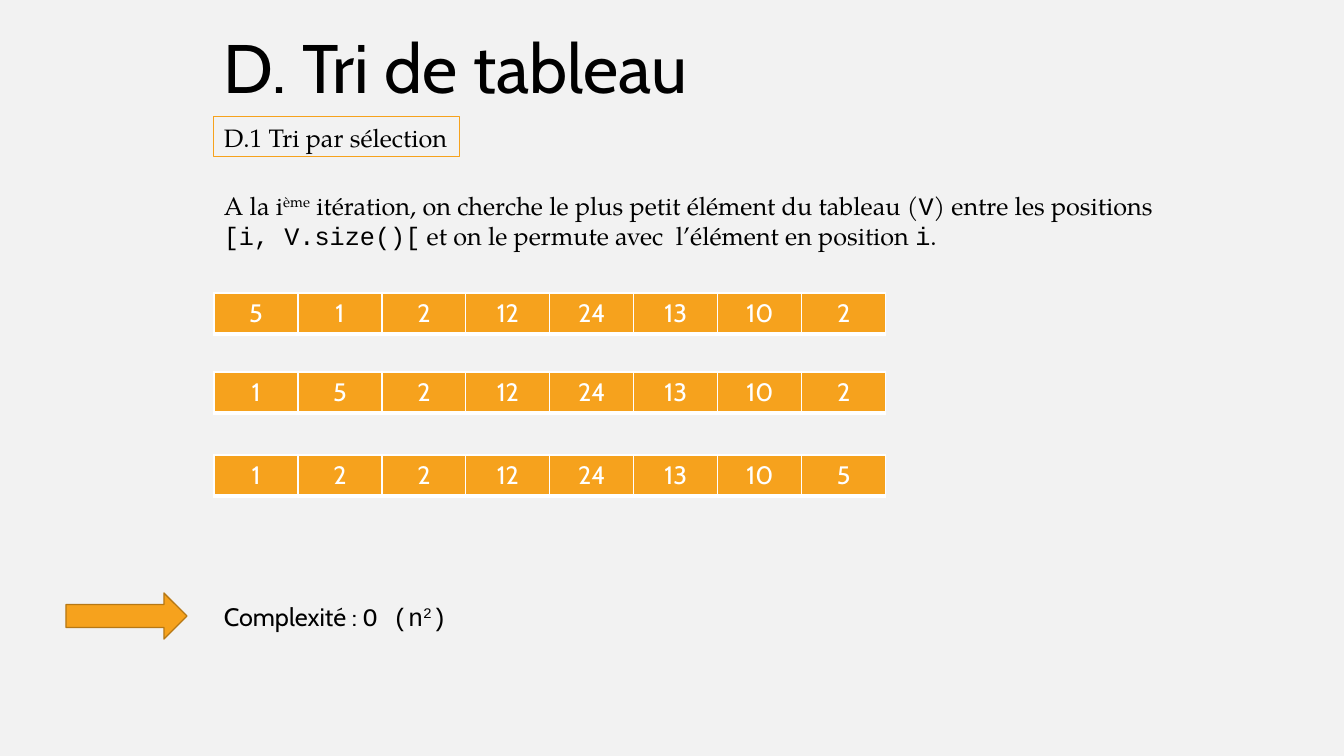
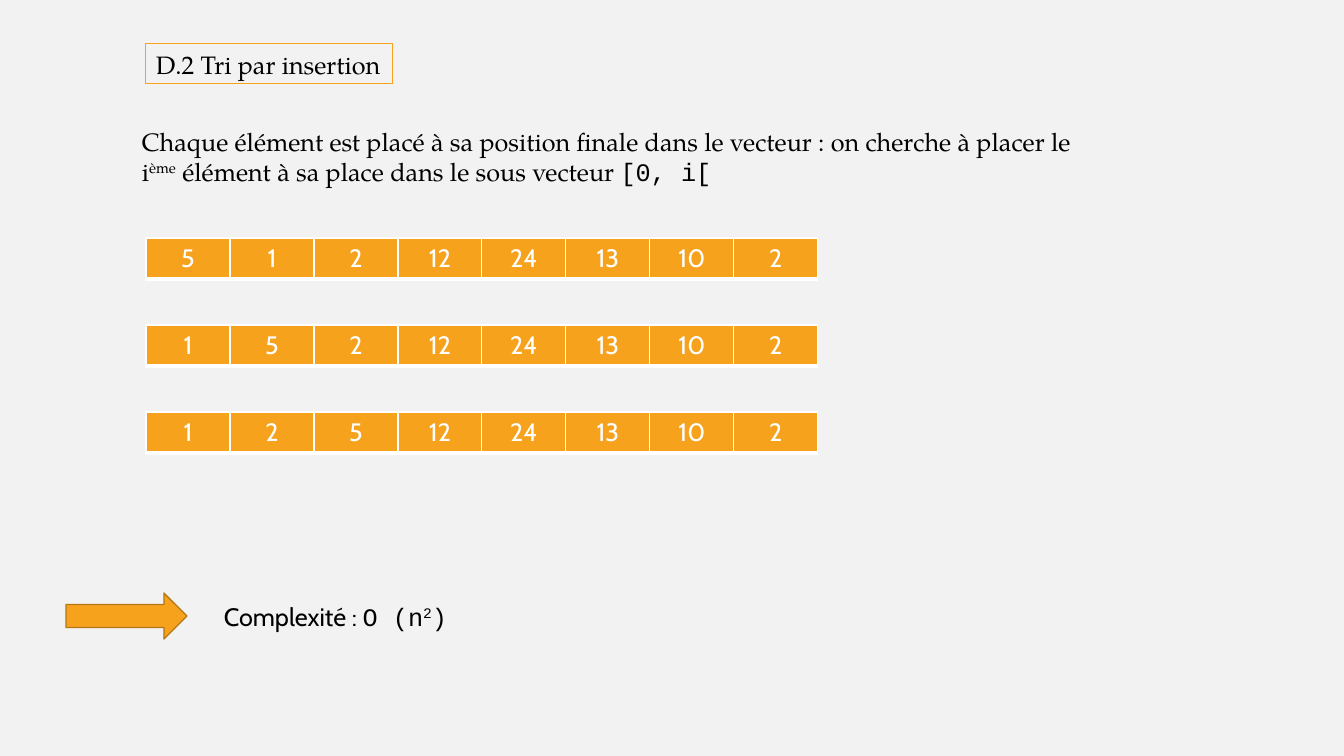
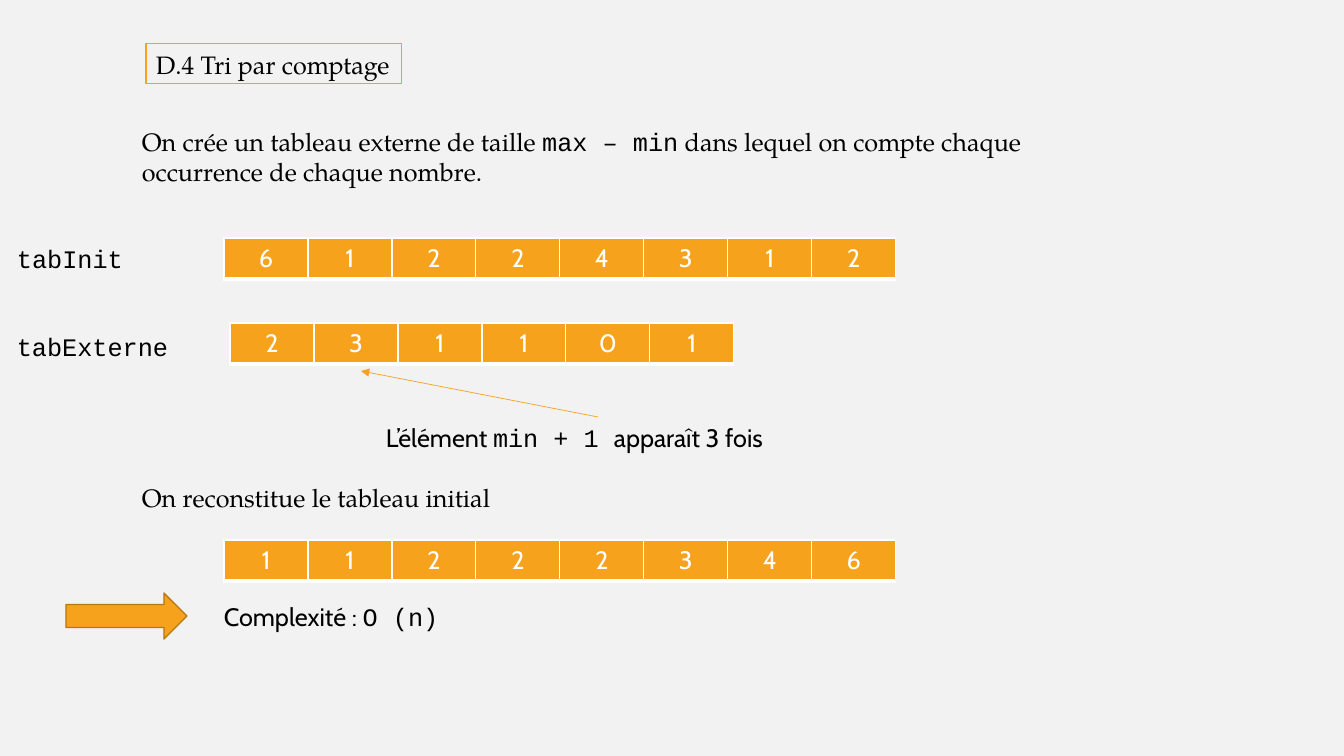
from dataclasses import dataclass
from typing import NamedTuple

from lxml.etree import SubElement
from pptx import Presentation
from pptx.dml.color import RGBColor
from pptx.enum.shapes import MSO_CONNECTOR, MSO_SHAPE
from pptx.enum.text import MSO_ANCHOR, MSO_AUTO_SIZE, PP_ALIGN
from pptx.oxml import parse_xml
from pptx.oxml.ns import nsdecls, qn
from pptx.util import Emu, Pt

SLIDE_WIDTH, SLIDE_HEIGHT = 1344, 756
EMU_PER_PX = 12192000 / SLIDE_WIDTH


@dataclass(frozen=True)
class Theme:
    background: str = "F2F2F2"
    accent: str = "F6A21D"
    accent_dark: str = "B67815"
    ink: str = "000000"
    white: str = "FFFFFF"
    sans: str = "Cabin"
    serif: str = "TeX Gyre Pagella"
    mono: str = "Courier New"
    title_size: int = 49
    body_size: int = 18


THEME = Theme()

# Array cells: size in px, border widths in points
CELL_WIDTH, CELL_HEIGHT = 84, 41
CELL_BORDERS = {"lnL": 1, "lnR": 1, "lnT": 1, "lnB": 3}
LINE_HEIGHT = 40


class Span(NamedTuple):
    text: str
    font: str
    raised: bool = False


def sans(text):
    return Span(text, THEME.sans)


def serif(text):
    return Span(text, THEME.serif)


def code(text):
    return Span(text, THEME.mono)


def raised(span):
    return span._replace(raised=True)


def px(length):
    return Emu(round(length * EMU_PER_PX))


def rgb(colour):
    return RGBColor.from_string(colour)


# Text
def write(paragraph, spans, size=THEME.body_size, colour=THEME.ink):
    for span in spans:
        run = paragraph.add_run()
        run.text = span.text
        run.font.name = span.font
        run.font.size = Pt(size)
        run.font.color.rgb = rgb(colour)
        if span.raised:
            run._r.get_or_add_rPr().set("baseline", "30000")


def add_text(slide, left, top, width, lines, height=LINE_HEIGHT):
    frame = slide.shapes.add_textbox(px(left), px(top), px(width), px(height)).text_frame
    frame.word_wrap = True
    frame.auto_size = MSO_AUTO_SIZE.SHAPE_TO_FIT_TEXT
    paragraph = frame.paragraphs[0]
    for index, spans in enumerate(lines):
        if index:
            paragraph.add_line_break()
        write(paragraph, spans)


def add_title(slide, text):
    frame = slide.shapes.add_textbox(px(214), px(16), px(832), px(101)).text_frame
    frame.word_wrap = True
    frame.vertical_anchor = MSO_ANCHOR.MIDDLE
    write(frame.paragraphs[0], [sans(text)], THEME.title_size)


# Shapes
def add_preset(slide, preset, left, top, width, height, line, weight):
    shape = slide.shapes.add_shape(preset, px(left), px(top), px(width), px(height))
    shape.shadow.inherit = False
    shape.line.color.rgb = rgb(line)
    shape.line.width = Pt(weight)
    return shape


def add_heading(slide, left, top, width, text):
    heading = add_preset(slide, MSO_SHAPE.RECTANGLE, left, top, width, LINE_HEIGHT,
                         THEME.accent, 0.75)
    heading.fill.background()
    frame = heading.text_frame
    frame.word_wrap = False
    frame.auto_size = MSO_AUTO_SIZE.SHAPE_TO_FIT_TEXT
    frame.vertical_anchor = MSO_ANCHOR.MIDDLE
    frame.paragraphs[0].alignment = PP_ALIGN.LEFT
    write(frame.paragraphs[0], [serif(text)])


def add_complexity(slide, cost):
    arrow = add_preset(slide, MSO_SHAPE.RIGHT_ARROW, 66, 593, 121, 46, THEME.accent_dark, 1)
    arrow.fill.solid()
    arrow.fill.fore_color.rgb = rgb(THEME.accent)
    add_text(slide, 214, 596, 1011, [[sans("Complexité : "), *cost]])


def add_pointer(slide, start, end):
    pointer = slide.shapes.add_connector(MSO_CONNECTOR.STRAIGHT, *map(px, start + end))
    pointer.line.color.rgb = rgb(THEME.accent)
    pointer.line.width = Pt(0.5)
    properties = pointer._element.spPr
    SubElement(properties.find(qn("a:ln")), qn("a:tailEnd"), type="triangle")
    SubElement(properties, qn("a:effectLst"))


# Arrays
def add_borders(cell):
    properties = cell._tc.get_or_add_tcPr()
    for index, (side, weight) in enumerate(CELL_BORDERS.items()):
        properties.insert(index, parse_xml(
            f'<a:{side} {nsdecls("a")} w="{Pt(weight)}"><a:solidFill>'
            f'<a:srgbClr val="{THEME.white}"/></a:solidFill></a:{side}>'))


def add_array(slide, left, top, values):
    table = slide.shapes.add_table(1, len(values), px(left), px(top),
                                   px(CELL_WIDTH * len(values)), px(CELL_HEIGHT)).table
    table.first_row = table.horz_banding = False
    for column, value in enumerate(values):
        table.columns[column].width = px(CELL_WIDTH)
        cell = table.cell(0, column)
        cell.fill.solid()
        cell.fill.fore_color.rgb = rgb(THEME.accent)
        add_borders(cell)
        paragraph = cell.text_frame.paragraphs[0]
        paragraph.alignment = PP_ALIGN.CENTER
        write(paragraph, [sans(str(value))], colour=THEME.white)


# Slides
QUADRATIC = [code("O (n"), raised(code("2")), code(")")]


def selection_sort(slide):
    add_title(slide, "D. Tri de tableau")
    add_heading(slide, 214, 117, 246, "D.1 Tri par sélection")
    add_text(slide, 214, 185, 986, [
        [serif("A la i"), raised(serif("ème")),
         serif(" itération, on cherche le plus petit élément du tableau ("),
         code("V"), serif(") entre les positions ")],
        [code("[i, V.size()["), serif(" et on le permute avec  l’élément en position "),
         code("i"), serif(".")],
    ], height=72)
    steps = {
        293: [5, 1, 2, 12, 24, 13, 10, 2],
        372: [1, 5, 2, 12, 24, 13, 10, 2],
        455: [1, 2, 2, 12, 24, 13, 10, 5],
    }
    for top, values in steps.items():
        add_array(slide, 214, top, values)
    add_complexity(slide, QUADRATIC)


def insertion_sort(slide):
    add_heading(slide, 146, 44, 247, "D.2 Tri par insertion")
    add_text(slide, 132, 121, 986, [[
        serif("Chaque élément est placé à sa position finale dans le vecteur : "
              "on cherche à placer le i"),
        raised(serif("ème")), serif(" élément à sa place dans le sous vecteur "),
        code("[0, i["),
    ]], height=102)
    steps = [
        [5, 1, 2, 12, 24, 13, 10, 2],
        [1, 5, 2, 12, 24, 13, 10, 2],
        [1, 2, 5, 12, 24, 13, 10, 2],
    ]
    for index, values in enumerate(steps):
        add_array(slide, 146, 238 + 87 * index, values)
    add_complexity(slide, QUADRATIC)


def counting_sort(slide):
    add_heading(slide, 146, 44, 256, "D.4 Tri par comptage")
    add_text(slide, 132, 121, 986, [[
        serif("On crée un tableau externe de taille "), code("max – min"),
        serif(" dans lequel on compte chaque occurrence de chaque nombre."),
    ]], height=102)

    # Initial and counting arrays
    add_array(slide, 224, 238, [6, 1, 2, 2, 4, 3, 1, 2])
    add_array(slide, 230, 323, [2, 3, 1, 1, 0, 1])
    add_text(slide, 7, 238, 163, [[code("tabInit")]])
    add_text(slide, 7, 326, 177, [[code("tabExterne")]])
    add_pointer(slide, (598, 417), (361, 371))
    add_text(slide, 376, 417, 445, [
        [sans("L’élément "), code("min + 1 "), sans("apparaît 3 fois")]])

    # Sorted array
    add_text(slide, 132, 477, 986, [[serif("On reconstitue le tableau initial")]])
    add_array(slide, 224, 540, [1, 1, 2, 2, 2, 3, 4, 6])
    add_complexity(slide, [code("O (n)")])


def main():
    deck = Presentation()
    deck.slide_width, deck.slide_height = px(SLIDE_WIDTH), px(SLIDE_HEIGHT)
    backdrop = deck.slide_master.background.fill
    backdrop.solid()
    backdrop.fore_color.rgb = rgb(THEME.background)
    blank = deck.slide_layouts[6]
    for build in (selection_sort, insertion_sort, counting_sort):
        build(deck.slides.add_slide(blank))
    deck.save("out.pptx")


if __name__ == "__main__":
    main()
